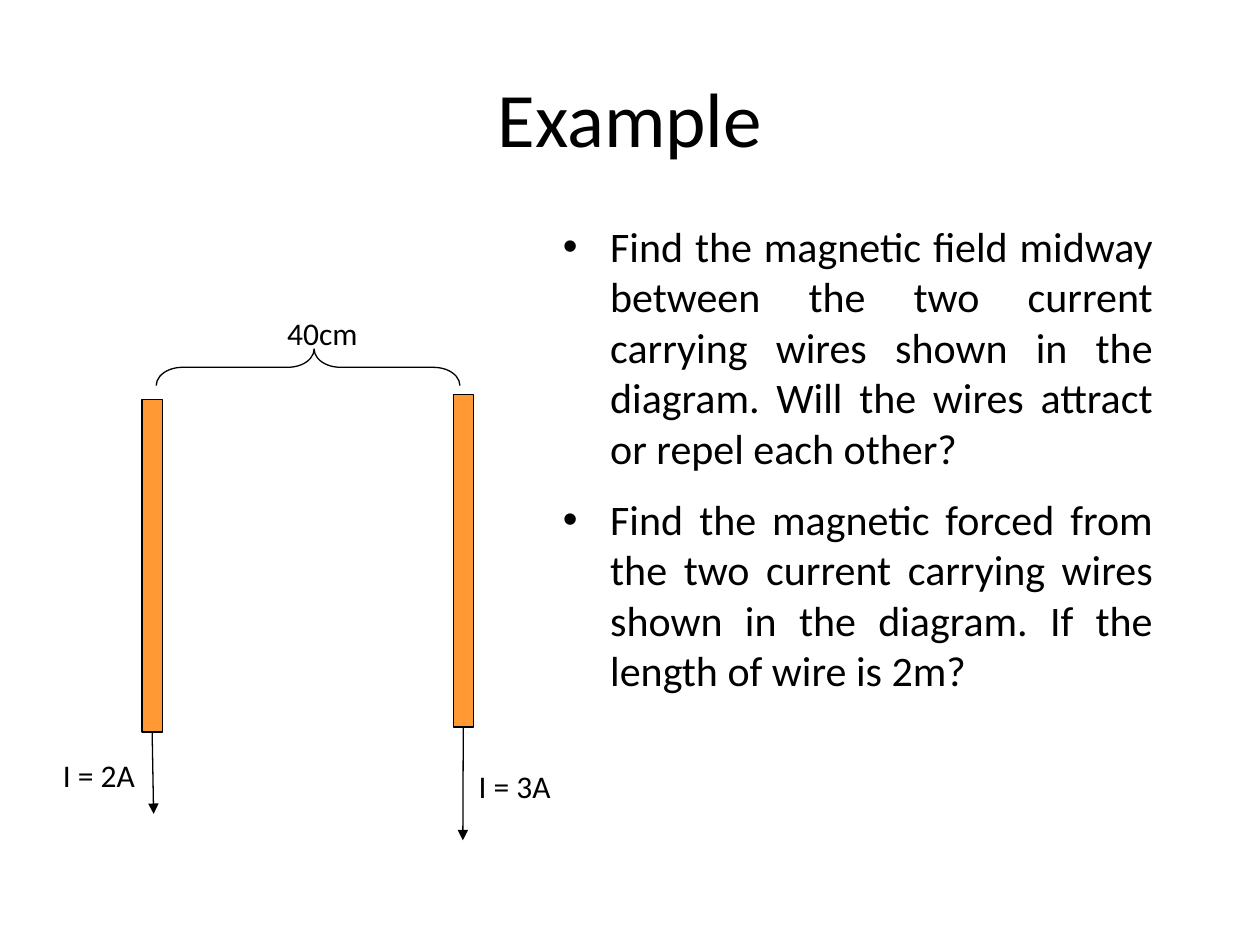
import pptx
import pptx.util
import pptx.dml.color
import pptx.enum.shapes
import pptx.enum.text
import pptx.oxml.ns
import lxml.etree

Pt = pptx.util.Pt
qn = pptx.oxml.ns.qn
SHAPE = pptx.enum.shapes.MSO_SHAPE
ALIGN = pptx.enum.text.PP_ALIGN
ANCHOR = pptx.enum.text.MSO_ANCHOR
COLORS = {"ink": "000000", "wire": "FF9933"}


class Sheet:
    """Holds the style and the current slide."""
    font = "Calibri"
    line_width = 0.75

    def __init__(self, slide):
        self.shapes = slide.shapes

    def color(self, name):
        return pptx.dml.color.RGBColor.from_string(COLORS[name])

    def outline(self, line):
        line.color.rgb = self.color("ink")
        line.width = Pt(self.line_width)

    def text(self, box, lines, size, align=ALIGN.LEFT, anchor=ANCHOR.TOP,
             bullet_indent=0, grow=False):
        tf = self.shapes.add_textbox(*map(Pt, box)).text_frame
        tf.word_wrap = True
        tf.vertical_anchor = anchor
        if grow:
            tf.auto_size = pptx.enum.text.MSO_AUTO_SIZE.SHAPE_TO_FIT_TEXT
        for i, line in enumerate(lines):
            p = tf.add_paragraph() if i else tf.paragraphs[0]
            p.alignment = align
            if i:
                p.space_before = Pt(size / 2)
            if bullet_indent:
                self.bullet(p, bullet_indent)
            r = p.add_run()
            r.text = line
            r.font.name = self.font
            r.font.size = Pt(size)
            r.font.color.rgb = self.color("ink")

    def bullet(self, p, indent):
        pPr = p._p.get_or_add_pPr()
        pPr.set("marL", str(Pt(indent)))
        pPr.set("indent", str(-Pt(indent)))
        lxml.etree.SubElement(pPr, qn("a:buFont")).set("typeface", "Arial")
        lxml.etree.SubElement(pPr, qn("a:buChar")).set("char", "•")

    def wire(self, box):
        sp = self.shapes.add_shape(SHAPE.RECTANGLE, *map(Pt, box))
        sp.shadow.inherit = False
        sp.fill.solid()
        sp.fill.fore_color.rgb = self.color("wire")
        self.outline(sp.line)
        return sp

    def arrow_below(self, wire, end_x, end_y):
        line = self.shapes.add_connector(
            pptx.enum.shapes.MSO_CONNECTOR.STRAIGHT,
            wire.left + wire.width // 2, wire.top + wire.height, Pt(end_x), Pt(end_y))
        line.begin_connect(wire, 2)
        self.outline(line.line)
        ln = line.line._get_or_add_ln()
        lxml.etree.SubElement(ln, qn("a:tailEnd")).set("type", "triangle")
        lxml.etree.SubElement(line._element.spPr, qn("a:effectLst"))

    def brace_above(self, left, top, width, height, adjustments):
        """A left brace turned so that its tip points up."""
        shift = (width - height) / 2
        sp = self.shapes.add_shape(SHAPE.LEFT_BRACE, Pt(left + shift), Pt(top - shift),
                                   Pt(height), Pt(width))
        sp.rotation = 90
        sp._element.spPr.find(qn("a:xfrm")).set("flipV", "1")
        for i, value in enumerate(adjustments):
            sp.adjustments[i] = value
        sp.shadow.inherit = False
        sp.fill.background()
        self.outline(sp.line)


prs = pptx.Presentation()
prs.slide_width, prs.slide_height = Pt(720), Pt(540)
s = Sheet(prs.slides.add_slide(prs.slide_layouts[6]))

# Title and questions
s.text((36, 21.6, 648, 90), ["Example"], 44, ALIGN.CENTER, ANCHOR.MIDDLE)
s.text((314.6, 122.4, 351.4, 356.4), [
    "Find the magnetic field midway between the two current carrying wires "
    "shown in the diagram. Will the wires attract or repel each other?",
    "Find the magnetic forced from the two current carrying wires shown in "
    "the diagram. If the length of wire is 2m?",
], 24, ALIGN.JUSTIFY, bullet_indent=27)

# Wires with their current arrows and labels
for wire_left, wire_top, end_x, end_y, label, label_box in [
    (81.2, 228.2, 87.8, 465.1, "I = 2A", (28.8, 428.4, 58.3, 24.5)),
    (259, 225.4, 264.5, 480.2, "I = 3A", (266.4, 434.9, 81.4, 24.5)),
]:
    wire = s.wire((wire_left, wire_top, 11.5, 190.1))
    s.arrow_below(wire, end_x, end_y)
    s.text(label_box, [label], 18, grow=True)

# Distance between the wires
s.brace_above(89.3, 199.4, 173.5, 20.9, (0.72, 0.52))
s.text((157, 175.7, 87.1, 24.5), ["40cm"], 18, grow=True)

prs.save("out.pptx")
